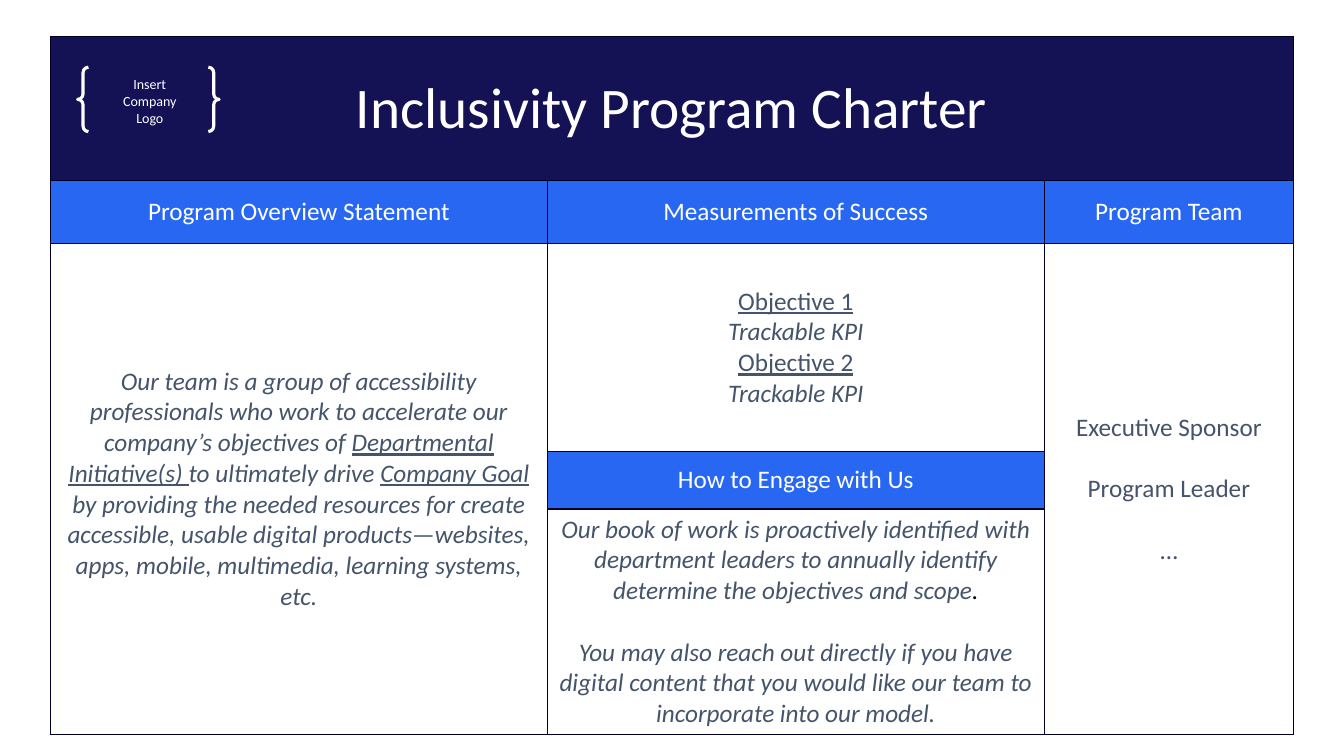
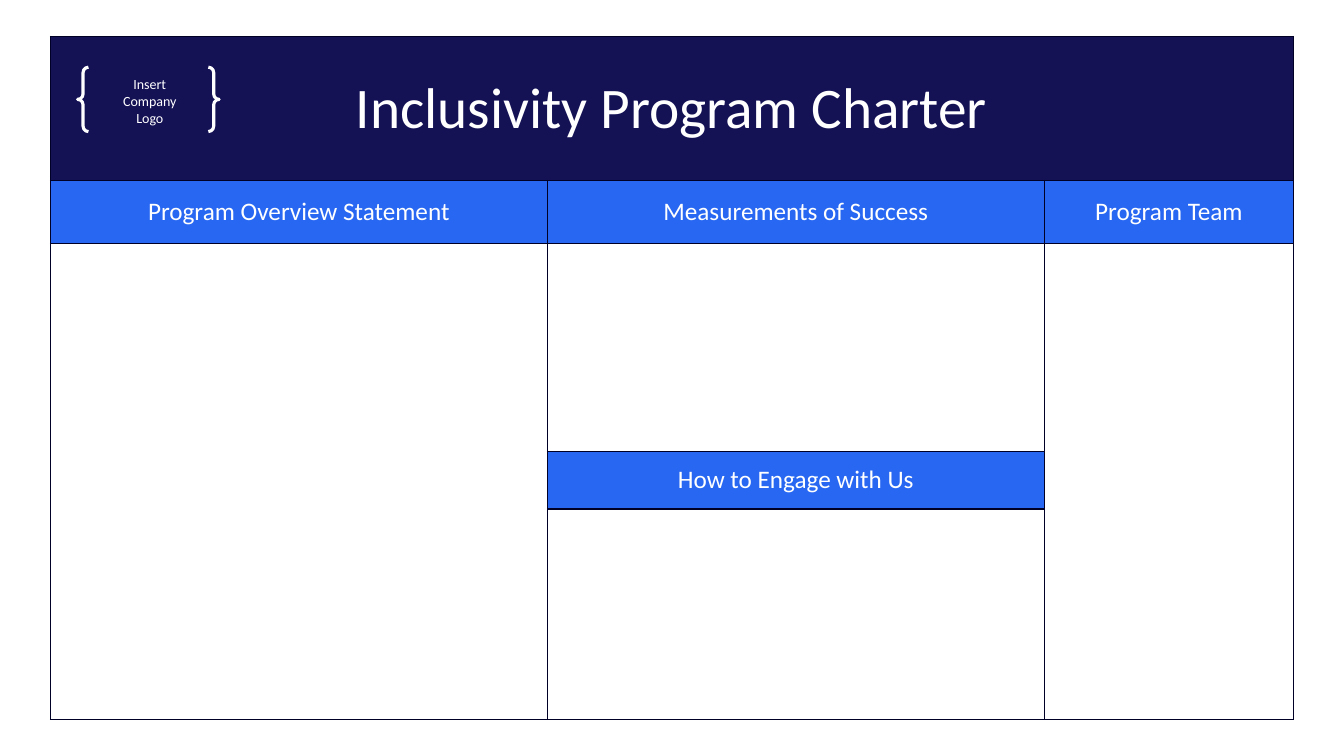
from dataclasses import dataclass

from lxml.etree import SubElement
from pptx import Presentation
from pptx.dml.color import RGBColor as RGB
from pptx.enum.shapes import MSO_SHAPE as Shape
from pptx.enum.text import MSO_ANCHOR as Anchor, PP_ALIGN as Align
from pptx.oxml.ns import qn
from pptx.util import Pt


@dataclass(frozen=True)
class Theme:
    """Colours, font and type sizes of the charter."""
    font: str = "Calibri"
    navy: str = "141155"
    blue: str = "2767F2"
    white: str = "FFFFFF"
    slate: str = "44546A"
    black: str = "000000"
    rule: str = "000026"
    title: int = 41
    body: int = 18
    small: int = 10
    gap: int = 22


@dataclass(frozen=True)
class Run:
    """A stretch of text with its emphasis."""
    text: str
    italic: bool = False
    underline: bool = False
    color: str = ""


T = Theme()
COLS = (355, 355, 178)
ROWS = (103, 45.2, 148.4, 41, 150.5)
MERGES = (((0, 0), (0, 2)), ((2, 0), (4, 0)), ((2, 2), (4, 2)))
HEADINGS = {
    (1, 0): "Program Overview Statement",
    (1, 1): "Measurements of Success",
    (1, 2): "Program Team",
    (3, 1): "How to Engage with Us",
}
OVERVIEW = [[
    Run("Our team is a group of accessibility professionals who work to "
        "accelerate our company’s objectives of ", True),
    Run("Departmental Initiative(s) ", True, True),
    Run("to ultimately drive ", True),
    Run("Company Goal", True, True),
    Run(" by providing the needed resources for create accessible, usable "
        "digital products—websites, apps, mobile, multimedia, learning "
        "systems, etc.", True),
]]
MEASURES = [
    [Run("Objective 1", underline=True)],
    [Run("Trackable KPI", italic=True)],
    [Run("Objective 2", underline=True)],
    [Run("Trackable KPI", italic=True)],
]
TEAM = [[Run("Executive Sponsor")], [Run("Program Leader")], [Run("…")]]
ENGAGE = [
    [Run("Our book of work is proactively identified with department leaders "
         "to annually identify determine the objectives and scope", True),
     Run(".", True, color=T.black)],
    [Run("You may also reach out directly if you have digital content that "
         "you would like our team to incorporate into our model.", True)],
]


def write(tf, paragraphs, size, color, gap=0):
    """Write centred paragraphs of runs, with a gap between paragraphs."""
    for i, runs in enumerate(paragraphs):
        p = tf.add_paragraph() if i else tf.paragraphs[0]
        p.alignment = Align.CENTER
        p.space_before = Pt(gap if i else 0)
        p.font.name, p.font.size = T.font, Pt(size)
        p.font.color.rgb = RGB.from_string(color)
        p.font.italic = all(run.italic for run in runs)
        for run in runs:
            r = p.add_run()
            r.text = run.text
            if run.underline:
                r.font.underline = True
            if run.color:
                r.font.color.rgb = RGB.from_string(run.color)


def style_cell(cell, fill):
    """Give a cell its rules, fill and middle anchor."""
    tc_pr = cell._tc.get_or_add_tcPr()
    for side in ("lnL", "lnR", "lnT", "lnB"):
        ln = SubElement(tc_pr, qn(f"a:{side}"), w=str(Pt(1)))
        color = SubElement(ln, qn("a:solidFill"))
        SubElement(color, qn("a:srgbClr"), val=T.rule)
    cell.fill.solid()
    cell.fill.fore_color.rgb = RGB.from_string(fill)
    cell.vertical_anchor = Anchor.MIDDLE


def add_charter(s):
    """Add the charter table with its title and headings."""
    frame = s.shapes.add_table(len(ROWS), len(COLS), Pt(36), Pt(26),
                               Pt(sum(COLS)), Pt(sum(ROWS)))
    table = frame.table
    table.first_row = table.horz_banding = False
    for column, width in zip(table.columns, COLS):
        column.width = Pt(width)
    for row, height in zip(table.rows, ROWS):
        row.height = Pt(height)
    for r in range(len(ROWS)):
        for c in range(len(COLS)):
            heading = T.blue if (r, c) in HEADINGS else T.white
            style_cell(table.cell(r, c), heading if r else T.navy)
    for first, last in MERGES:
        table.cell(*first).merge(table.cell(*last))
    write(table.cell(0, 0).text_frame, [[Run("Inclusivity Program Charter")]],
          T.title, T.white)
    for place, text in HEADINGS.items():
        write(table.cell(*place).text_frame, [[Run(text)]], T.body, T.white)
    return table


def add_logo_slot(s):
    """Add the braces and the label that hold the logo's place."""
    sp = s.shapes.add_shape(Shape.DOUBLE_BRACE, Pt(55.5), Pt(48), Pt(101), Pt(46))
    sp.shadow.inherit = False
    sp.fill.background()
    sp.line.color.rgb = RGB.from_string(T.white)
    sp.line.width = Pt(2.25)
    label = s.shapes.add_textbox(Pt(73.5), Pt(50.4), Pt(67), Pt(44))
    label.text_frame.word_wrap = True
    write(label.text_frame, [[Run("Insert Company Logo")]], T.small, T.white)


def add_charter_slide(prs, bodies):
    """Add a charter slide and fill the given body cells."""
    s = prs.slides.add_slide(prs.slide_layouts[6])
    table = add_charter(s)
    for place, (paragraphs, gap) in bodies.items():
        write(table.cell(*place).text_frame, paragraphs, T.body, T.slate, gap)
    add_logo_slot(s)


def main():
    """Build the sample charter and the empty one."""
    prs = Presentation()
    prs.slide_width, prs.slide_height = Pt(960), Pt(540)
    add_charter_slide(prs, {
        (2, 0): (OVERVIEW, 0),
        (2, 1): (MEASURES, 0),
        (2, 2): (TEAM, T.gap),
        (4, 1): (ENGAGE, T.gap),
    })
    add_charter_slide(prs, {})
    prs.save("out.pptx")


if __name__ == "__main__":
    main()
